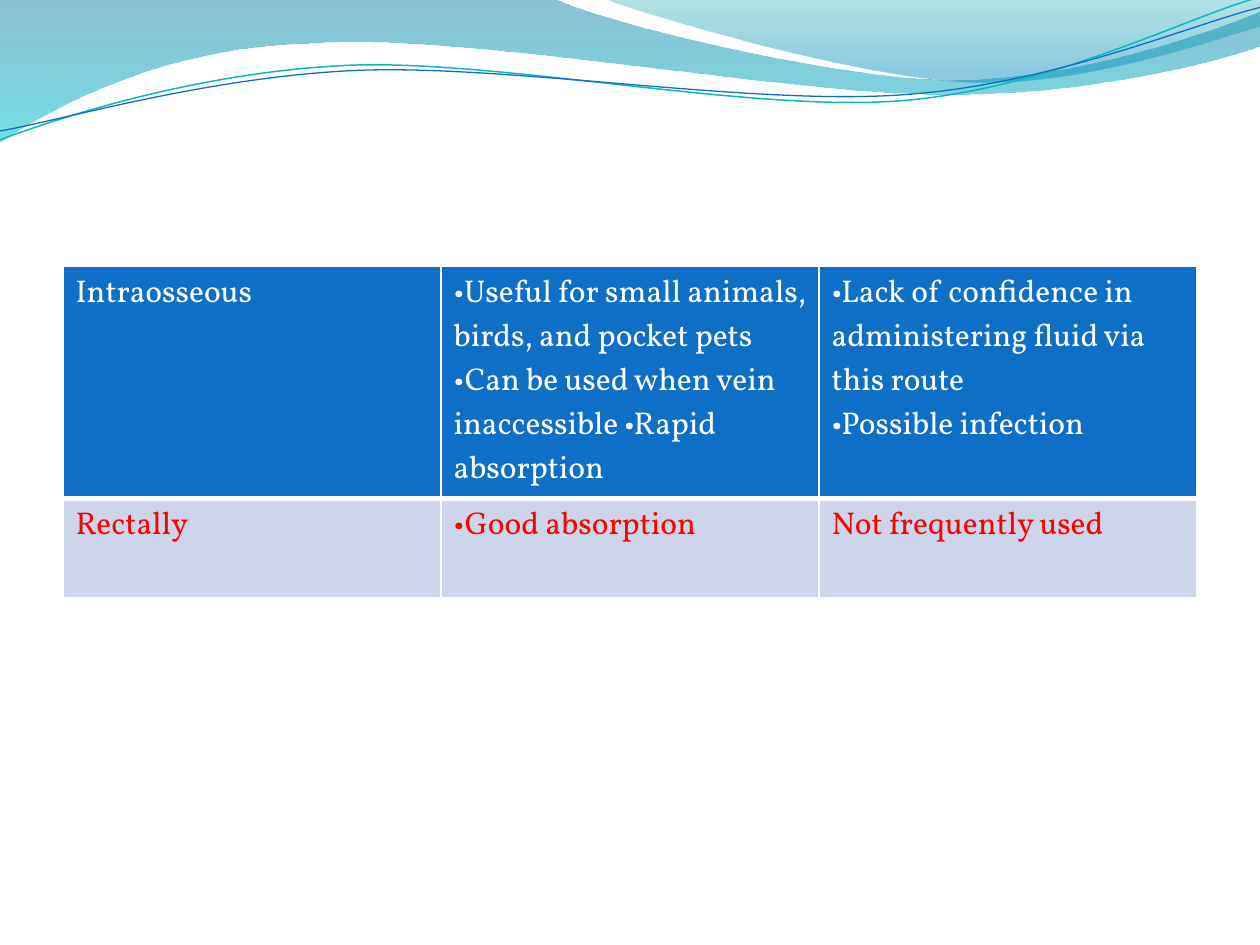
from lxml.etree import SubElement
from pptx import Presentation
from pptx.dml.color import RGBColor
from pptx.oxml.ns import qn
from pptx.util import Cm, Pt

HUES = {"white": "FFFFFF", "red": "FF0000", "blue": "0F6FC6",
        "pale": "CCD5EA", "teal": "0AB8BF", "deep": "0074A1",
        "aqua": "00C6CF", "sea": "00A1A9", "sky": "008BBF"}
FONT = "Vollkorn"


def hue(name):
    return RGBColor.from_string(HUES[name])


def draw(start, parts, closed):
    """Trace lines (x, y) and cubic curves (x1, y1, x2, y2, x, y) in cm."""
    pts = [(Cm(p[i]), Cm(p[i + 1]))
           for p in parts for i in range(0, len(p), 2)]
    path = slide.shapes.build_freeform(Cm(start[0]), Cm(start[1]))
    path.add_line_segments(pts, close=closed)
    shape = path.convert_to_shape()
    shape.shadow.inherit = False
    # Join each three segments of a curve into one cubic
    legs = shape.element.spPr.iter(qn("a:lnTo"))
    legs = iter(list(legs))
    for part in parts:
        leg = next(legs)
        if len(part) == 6:
            cubic = leg.makeelement(qn("a:cubicBezTo"))
            leg.addprevious(cubic)
            for old in (leg, next(legs), next(legs)):
                cubic.append(old[0])
                old.getparent().remove(old)
    return shape


prs = Presentation()
prs.slide_width, prs.slide_height = Cm(25.4), Cm(19.05)
slide = prs.slides.add_slide(prs.slide_layouts[6])

# Translucent waves: start, outline, stops (position, colour, opacity)
waves = [
    ((0, 0),
     [(11.18, -0.03), (12.09, 0.43, 16.87, 1.6, 19.25, 1.6),
      (21.67, 1.6, 24.33, 0.66, 25.4, 0.23), (25.43, 0.91),
      (24.97, 1.12, 22.1, 1.93, 18.95, 1.9),
      (15.8, 1.9, 9.7, 0.71, 6.53, 0.86),
      (3.28, 0.91, 1.17, 2.11, -0.03, 2.87)],
     [(0, "deep", 45), (1, "aqua", 55)]),
    ((12.17, -0.03),
     [(12.93, 0.28, 17.32, 1.57, 19.53, 1.65),
      (21.74, 1.75, 24.41, 0.81, 25.4, 0.53), (25.4, 0)],
     [(0, "sea", 30), (0.8, "sky", 45)]),
]
for start, parts, stops in waves:
    wave = draw(start, parts, True)
    wave.line.fill.background()
    wave.fill.gradient()
    wave.fill.gradient_angle = 270
    for stop, (pos, name, alpha) in zip(wave.fill.gradient_stops, stops):
        stop.position = pos
        stop.color.rgb = hue(name)
    tints = wave.element.spPr.iter(qn("a:srgbClr"))
    for tint, (pos, name, alpha) in zip(tints, stops):
        SubElement(tint, qn("a:alpha"), val=str(alpha * 1000))

# Thin curves over the waves, tilted slightly
curves = [
    ((-0.05, 2.22),
     [(1.19, 1.82, 4.02, 1.04, 7.05, 1.05),
      (10.05, 1.07, 15.02, 2.37, 18.08, 2.29),
      (21.13, 2.2, 23.87, 0.91, 25.41, 0.55)], "teal", 0.85),
    ((-0.04, 2.04),
     [(1.16, 1.9, 4.18, 1.15, 7.2, 1.16),
      (10.25, 1.18, 15.13, 2.25, 18.18, 2.17),
      (21.21, 2.1, 23.93, 1.06, 25.45, 0.75)], "blue", 0.75),
]
for start, parts, name, width in curves:
    curve = draw(start, parts, False)
    curve.rotation = 357.3
    curve.fill.background()
    curve.line.color.rgb = hue(name)
    curve.line.width = Pt(width)

# Table of routes: fill, text colour, top and bottom border, height, cells
rows = [
    ("blue", "white", 1, 3, 4.65,
     ["Intraosseous",
      "•Useful for small animals, birds, and pocket pets "
      "•Can be used when vein inaccessible •Rapid absorption",
      "•Lack of confidence in administering fluid via this route\n"
      "•Possible infection"]),
    ("pale", "red", 3, 1, 2.0,
     ["Rectally", "•Good absorption", "Not frequently used"]),
]
table = slide.shapes.add_table(2, 3, Cm(1.27), Cm(5.37),
                               Cm(22.86), Cm(6.65)).table
for col in table.columns:
    col.width = Cm(7.62)
for row, (back, ink, top, base, tall, texts) in zip(table.rows, rows):
    row.height = Cm(tall)
    for cell, text in zip(row.cells, texts):
        cell.text = text
        for para in cell.text_frame.paragraphs:
            para.font.name = FONT
            para.font.size = Pt(18)
            para.font.bold = False
            para.font.color.rgb = hue(ink)
        props = cell._tc.get_or_add_tcPr()
        for side, width in zip("LRTB", (1, 1, top, base)):
            edge = SubElement(props, qn("a:ln" + side), w=str(Pt(width)))
            fill = SubElement(edge, qn("a:solidFill"))
            SubElement(fill, qn("a:srgbClr"), val=HUES["white"])
        cell.fill.solid()
        cell.fill.fore_color.rgb = hue(back)

prs.save("out.pptx")
